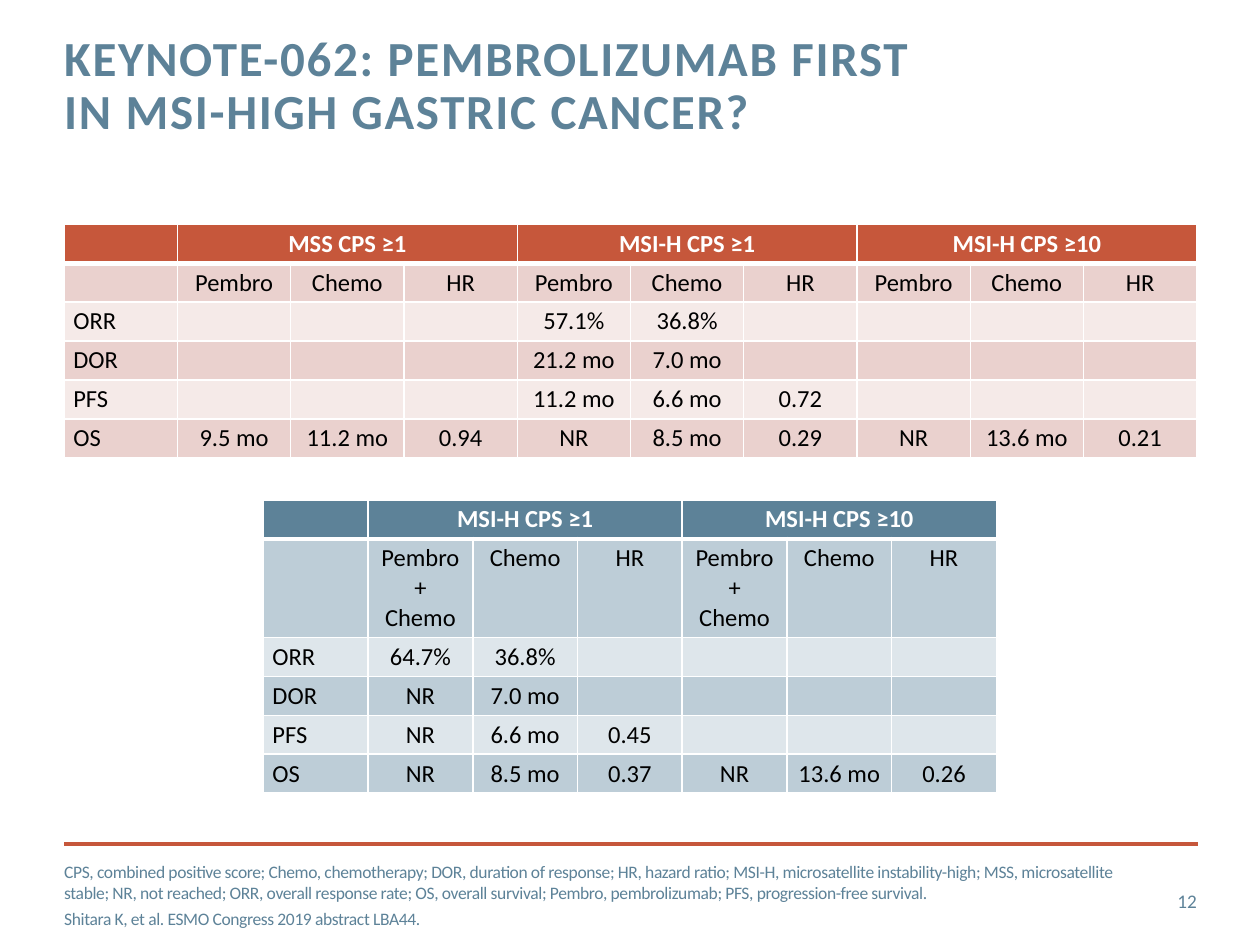
from dataclasses import dataclass

from lxml import etree
from pptx import Presentation
from pptx import util as u
from pptx.dml.color import RGBColor
from pptx.enum import shapes, text
from pptx.oxml import ns

Pt = u.Pt
LEFT, MID, RIGHT = text.PP_ALIGN.LEFT, text.PP_ALIGN.CENTER, text.PP_ALIGN.RIGHT


@dataclass(frozen=True)
class Theme:
    font: str = "Calibri"
    blue: str = "5D8298"
    rust: str = "C6573B"
    white: str = "FFFFFF"
    black: str = "000000"
    rose: tuple = ("EAD1CE", "F5EAE8")
    mist: tuple = ("BDCDD7", "DEE6EB")
    head: float = 28
    cell: float = 14
    page: float = 11
    note: float = 10


def write(frame, *lines, size, color, font, bold=False, align=LEFT, track=0,
          lead=None, gap=0, pad=(0, 0), anchor=text.MSO_ANCHOR.TOP, plain=False):
    frame.word_wrap = True
    frame.auto_size = text.MSO_AUTO_SIZE.NONE
    frame.vertical_anchor = anchor
    frame.margin_left = frame.margin_right = Pt(pad[0])
    frame.margin_top = frame.margin_bottom = Pt(pad[1])
    for i, line in enumerate(lines):
        para = frame.add_paragraph() if i else frame.paragraphs[0]
        if plain:
            props = para._p.get_or_add_pPr()
            props.set("marL", "0")
            props.set("indent", "0")
            etree.SubElement(props, ns.qn("a:buNone"))
        para.alignment = align
        para.space_before = Pt(gap if i else 0)
        if lead:
            para.line_spacing = Pt(lead)
        if not line:
            end = etree.SubElement(para._p, ns.qn("a:endParaRPr"))
            end.set("sz", str(size * 100))
            continue
        run = para.add_run()
        run.text = line
        run.font.name, run.font.size, run.font.bold = font, Pt(size), bold
        run.font.color.rgb = RGBColor.from_string(color)
        if track:
            run._r.get_or_add_rPr().set("spc", str(round(track * 100)))


class Deck:
    """Hold the theme and the current slide."""

    def __init__(self, theme):
        self.look = theme
        self.prs = Presentation()
        self.prs.slide_width, self.prs.slide_height = Pt(720), Pt(540)
        self.page = self.prs.slides.add_slide(self.prs.slide_layouts[1])

    def place(self, shape, box):
        shape.left, shape.top, shape.width, shape.height = map(Pt, box)
        return shape.text_frame

    def title(self, line, box):
        frame = self.place(self.page.shapes.title, box)
        write(frame, line, size=self.look.head, color=self.look.blue,
              font=self.look.font, bold=True, track=1, lead=30)

    def notes(self, lines, box):
        frame = self.place(self.page.placeholders[1], box)
        write(frame, *lines, size=self.look.note, color=self.look.blue,
              font=self.look.font, track=-0.2, gap=3, plain=True,
              anchor=text.MSO_ANCHOR.MIDDLE)

    def label(self, line, box):
        frame = self.page.shapes.add_textbox(*map(Pt, box)).text_frame
        write(frame, line, size=self.look.page, color=self.look.blue,
              font=self.look.font, align=RIGHT, anchor=text.MSO_ANCHOR.MIDDLE)

    def rule(self, x, y, end):
        line = self.page.shapes.add_connector(
            shapes.MSO_CONNECTOR.STRAIGHT, Pt(x), Pt(y), Pt(end), Pt(y))
        line.line.color.rgb = RGBColor.from_string(self.look.rust)
        line.line.width = Pt(2)
        etree.SubElement(line._element.spPr, ns.qn("a:effectLst"))

    def edge(self, cell, top, base):
        props = cell._tc.get_or_add_tcPr()
        for side, wide in zip("LRTB", (1, 1, top, base)):
            line = etree.SubElement(props, ns.qn("a:ln" + side), w=str(Pt(wide)))
            fill = etree.SubElement(line, ns.qn("a:solidFill"))
            etree.SubElement(fill, ns.qn("a:srgbClr"), val=self.look.white)

    def table(self, groups, arms, data, x, y, wide, tall, dark, bands):
        top = [""] + [word for name in groups for word in (name, "", "")]
        rows = [top, [""] + arms * len(groups)] + data
        cols = len(top)
        grid = self.page.shapes.add_table(
            len(rows), cols, Pt(x), Pt(y), Pt(wide * cols), Pt(sum(tall))).table
        for col in grid.columns:
            col.width = Pt(wide)
        for r, row in enumerate(rows):
            grid.rows[r].height = Pt(tall[r])
            for c in range(cols):
                cell = grid.cell(r, c)
                self.edge(cell, 3 if r == 1 else 1, 1 if r else 3)
                cell.fill.solid()
                tone = bands[(r + 1) % 2] if r else dark
                cell.fill.fore_color.rgb = RGBColor.from_string(tone)
                cell.margin_left = cell.margin_right = Pt(5.2)
                cell.margin_top = cell.margin_bottom = Pt(2.6)
                write(cell.text_frame, row[c] if c < len(row) else "",
                      size=self.look.cell, font=self.look.font,
                      color=self.look.black if r else self.look.white,
                      bold=r == 0, align=MID if c else LEFT, pad=(5.2, 2.6))
        for c in range(1, cols, 3):
            grid.cell(0, c).merge(grid.cell(0, c + 2))


def main():
    look = Theme()
    deck = Deck(look)
    deck.rule(36.7, 482.4, 684.7)
    deck.title("KEYNOTE-062: PEMBROLIZUMAB FIRST IN MSI-HIGH GASTRIC CANCER?",
               (36.7, 19.4, 516.2, 63.4))
    deck.notes([
        "CPS, combined positive score; Chemo, chemotherapy; DOR, duration of "
        "response; HR, hazard ratio; MSI-H, microsatellite instability-high; "
        "MSS, microsatellite stable; NR, not reached; ORR, overall response "
        "rate; OS, overall survival; Pembro, pembrolizumab; PFS, "
        "progression-free survival.",
        "Shitara K, et al. ESMO Congress 2019 abstract LBA44.",
    ], (36.7, 489.6, 601.2, 43.9))
    deck.label("12", (637.9, 500.4, 46.1, 28.8))
    deck.table(
        ["MSS CPS ≥1", "MSI-H CPS ≥1", "MSI-H CPS ≥10"],
        ["Pembro", "Chemo", "HR"],
        [["ORR", "", "", "", "57.1%", "36.8%"],
         ["DOR", "", "", "", "21.2 mo", "7.0 mo"],
         ["PFS", "", "", "", "11.2 mo", "6.6 mo", "0.72"],
         ["OS", "9.5 mo", "11.2 mo", "0.94", "NR", "8.5 mo", "0.29",
          "NR", "13.6 mo", "0.21"]],
        36.7, 128.2, 64.73, [22.2] * 6, look.rust, look.rose)
    deck.table(
        ["MSI-H CPS ≥1", "MSI-H CPS ≥10"],
        ["Pembro + Chemo", "Chemo", "HR"],
        [["ORR", "64.7%", "36.8%"],
         ["DOR", "NR", "7.0 mo"],
         ["PFS", "NR", "6.6 mo", "0.45"],
         ["OS", "NR", "8.5 mo", "0.37", "NR", "13.6 mo", "0.26"]],
        150.5, 285.8, 59.86, [22.2, 38.2] + [22.2] * 4, look.blue, look.mist)
    deck.prs.save("out.pptx")


if __name__ == "__main__":
    main()
